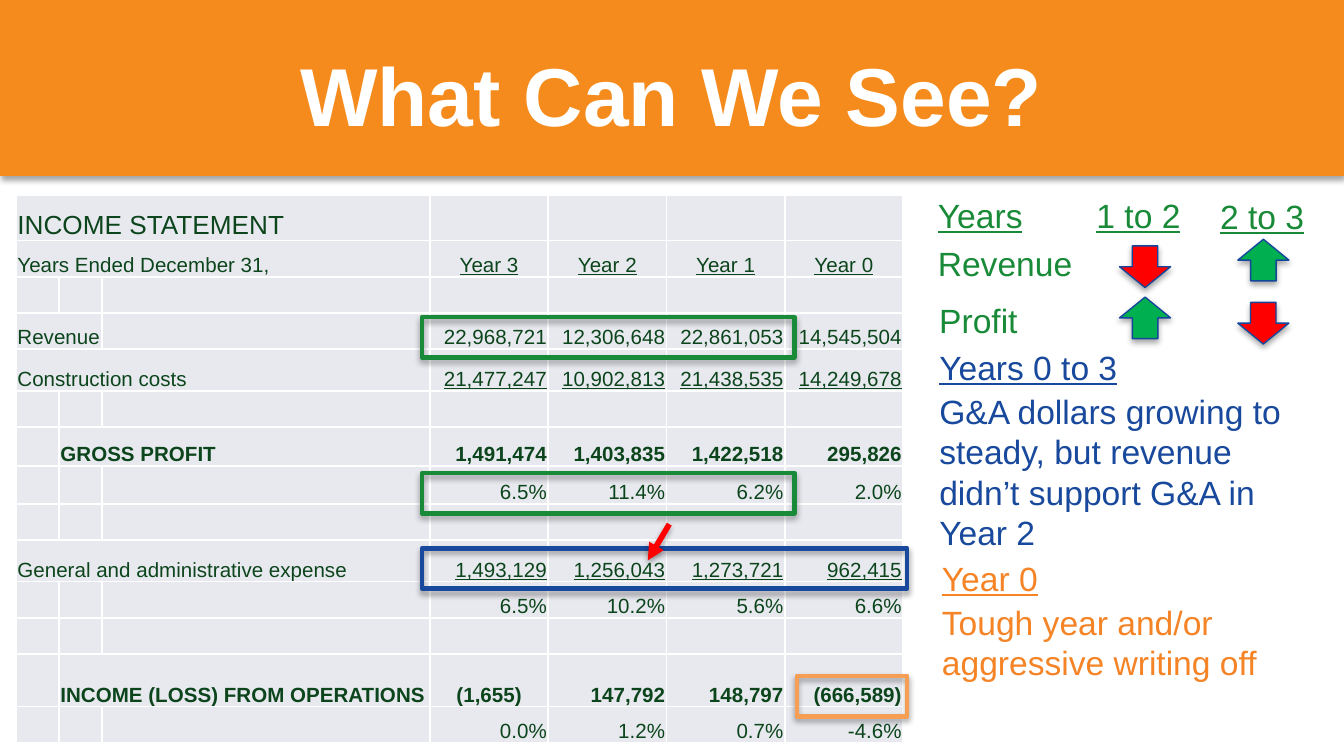
import pptx
import pptx.util
import pptx.dml.color
import pptx.enum.shapes
import pptx.enum.text
import pptx.oxml
import pptx.oxml.ns
from lxml import etree

Inches = pptx.util.Inches
Pt = pptx.util.Pt
Shape = pptx.enum.shapes.MSO_SHAPE
Align = pptx.enum.text.PP_ALIGN
Anchor = pptx.enum.text.MSO_ANCHOR
color = pptx.dml.color.RGBColor.from_string
qn = pptx.oxml.ns.qn
GREEN, BLUE, ORANGE = "188A38", "18499C", "F48426"


def add_span(para, text, ink, **formats):
    span = para.add_run()
    span.text = text
    span.font.name = "Arial"
    span.font.color.rgb = color(ink)
    for name, value in formats.items():
        setattr(span.font, name, value)


def add_shadow(element):
    properties = element.find(qn("p:spPr"))
    for effects in properties.findall(qn("a:effectLst")):
        properties.remove(effects)
    properties.append(pptx.oxml.parse_xml(
        '<a:effectLst xmlns:a="http://schemas.openxmlformats.org/drawingml/2006/main">'
        '<a:outerShdw blurRad="40000" dist="23000" dir="5400000" rotWithShape="0">'
        '<a:srgbClr val="000000"><a:alpha val="35000"/></a:srgbClr>'
        '</a:outerShdw></a:effectLst>'))


deck = pptx.Presentation()
deck.slide_width = Inches(10)
deck.slide_height = Inches(10) * 9 // 16
page = deck.slides.add_slide(deck.slide_layouts[6])

banner = page.shapes.add_shape(Shape.RECTANGLE, 0, 0, Inches(10), Inches(1.31))
banner.fill.solid()
banner.fill.fore_color.rgb = color("F58B1C")
banner.line.fill.background()
add_shadow(banner._element)

title = page.shapes.add_textbox(Inches(0.5), Inches(0.23), Inches(9), Inches(0.94))
title.text_frame.word_wrap = True
title.text_frame.vertical_anchor = Anchor.MIDDLE
title.text_frame.paragraphs[0].alignment = Align.CENTER
add_span(title.text_frame.paragraphs[0], "What Can We See?", "FFFFFF", size=Pt(44), bold=True)

PLAIN, BOLD, UNDERLINED = {}, {"bold": True}, {"underline": True}
statement = [
    (0.34, 0, 3, "INCOME STATEMENT", "", PLAIN),
    (0.27, 0, 3, "Years Ended December 31,", "Year 3|Year 2|Year 1|Year 0", UNDERLINED),
    (0.27, 0, 1, "", "", PLAIN),
    (0.27, 0, 2, "Revenue", "22,968,721|12,306,648|22,861,053|14,545,504", PLAIN),
    (0.31, 0, 3, "Construction costs", "21,477,247|10,902,813|21,438,535|14,249,678", UNDERLINED),
    (0.27, 0, 1, "", "", PLAIN),
    (0.29, 1, 2, "GROSS PROFIT", "1,491,474|1,403,835|1,422,518|295,826", BOLD),
    (0.28, 0, 1, "", "6.5%|11.4%|6.2%|2.0%", PLAIN),
    (0.27, 0, 1, "", "", PLAIN),
    (0.31, 0, 3, "General and administrative expense", "1,493,129|1,256,043|1,273,721|962,415", UNDERLINED),
    (0.27, 0, 1, "", "6.5%|10.2%|5.6%|6.6%", PLAIN),
    (0.27, 0, 1, "", "", PLAIN),
    (0.39, 1, 2, "INCOME (LOSS) FROM OPERATIONS", "(1,655)|147,792|148,797|(666,589)", BOLD),
    (0.27, 0, 1, "", "0.0%|1.2%|0.7%|-4.6%", PLAIN),
]
frame = page.shapes.add_table(len(statement), 7, Inches(0.12), Inches(1.45), Inches(6.6), Inches(4.08))
table = frame.table
table.first_row = table.horz_banding = False
for column, width in zip(table.columns, [0.32, 0.32, 2.44] + [0.88] * 4):
    column.width = Inches(width)

for row, (height, start, width, label, amounts, formats) in enumerate(statement):
    table.rows[row].height = Inches(height)
    texts = [""] * 3 + (amounts.split("|") if amounts else [""] * 4)
    texts[start] = label
    if width > 1:
        table.cell(row, start).merge(table.cell(row, start + width - 1))
    for column, text in enumerate(texts):
        cell = table.cell(row, column)
        cell.fill.solid()
        cell.fill.fore_color.rgb = color("E8E9EF")
        cell.vertical_anchor = Anchor.BOTTOM
        cell.margin_left = cell.margin_right = cell.margin_top = Inches(0.01)
        cell.margin_bottom = 0
        para = cell.text_frame.paragraphs[0]
        if not text:
            etree.SubElement(para._p, qn("a:endParaRPr"), sz="1100")
            continue
        look = dict(formats)
        if column < 3:
            look["underline"] = False
        elif text.startswith("Year") or text == "(1,655)":
            para.alignment = Align.CENTER
        else:
            para.alignment = Align.RIGHT
        add_span(para, text, "0C451C", size=Pt(14 if row == 0 else 11), **look)

notes = [
    (6.88, 1.4, 2.01, 0.4, GREEN, [("Years", True), ("\t", False), ("1 to 2", True)]),
    (8.98, 1.41, 0.99, 0.4, GREEN, [("2 to 3", True)]),
    (6.88, 1.76, 1.23, 0.4, GREEN, [("Revenue", False)]),
    (6.89, 2.18, 1.23, 0.4, GREEN, [("Profit", False)]),
    (6.89, 2.53, 2.01, 0.4, BLUE, [("Years 0 to 3", True)]),
    (6.89, 2.86, 2.99, 1.31, BLUE,
     [("G&A dollars growing to steady, but revenue didn’t support G&A in Year 2", False)]),
    (6.91, 4.1, 2.01, 0.4, ORANGE, [("Year 0", True)]),
    (6.91, 4.43, 2.99, 0.71, ORANGE, [("Tough year and/or aggressive writing off", False)]),
]
for left, top, width, height, ink, spans in notes:
    box = page.shapes.add_textbox(Inches(left), Inches(top), Inches(width), Inches(height))
    box.text_frame.word_wrap = True
    para = box.text_frame.paragraphs[0]
    if len(spans) > 1:
        tabs = etree.SubElement(para._p.get_or_add_pPr(), qn("a:tabLst"))
        etree.SubElement(tabs, qn("a:tab"), pos=str(Inches(1.18)), algn="l")
    for text, underline in spans:
        add_span(para, text, ink, size=Pt(18), underline=underline)

for left, top, rising in [(8.33, 1.83, False), (8.33, 2.21, True), (9.21, 1.78, True), (9.21, 2.25, False)]:
    arrow = page.shapes.add_shape(Shape.DOWN_ARROW, Inches(left), Inches(top), Inches(0.38), Inches(0.31))
    arrow.rotation = 180 if rising else 0
    arrow.fill.solid()
    arrow.fill.fore_color.rgb = color("00B050" if rising else "FF0000")
    arrow.line.color.rgb = color("14479C")
    arrow.line.width = Pt(0.75)
    add_shadow(arrow._element)

for left, top, width, ink in [(3.14, 4.08, 3.61, BLUE), (3.14, 3.52, 2.77, GREEN),
                              (3.14, 2.36, 2.77, GREEN), (5.93, 5.03, 0.82, "F69E53")]:
    outline = page.shapes.add_shape(Shape.RECTANGLE, Inches(left), Inches(top), Inches(width), Inches(0.3))
    outline.fill.background()
    outline.line.color.rgb = color(ink)
    outline.line.width = Pt(2.5)
    add_shadow(outline._element)

pointer = page.shapes.add_connector(pptx.enum.shapes.MSO_CONNECTOR.STRAIGHT,
                                    Inches(4.98), Inches(3.9), Inches(4.82), Inches(4.17))
pointer.line.color.rgb = color("FF0000")
pointer.line.width = Pt(3)
etree.SubElement(pointer.line._get_or_add_ln(), qn("a:tailEnd"), type="triangle")
add_shadow(pointer._element)

deck.save("out.pptx")
